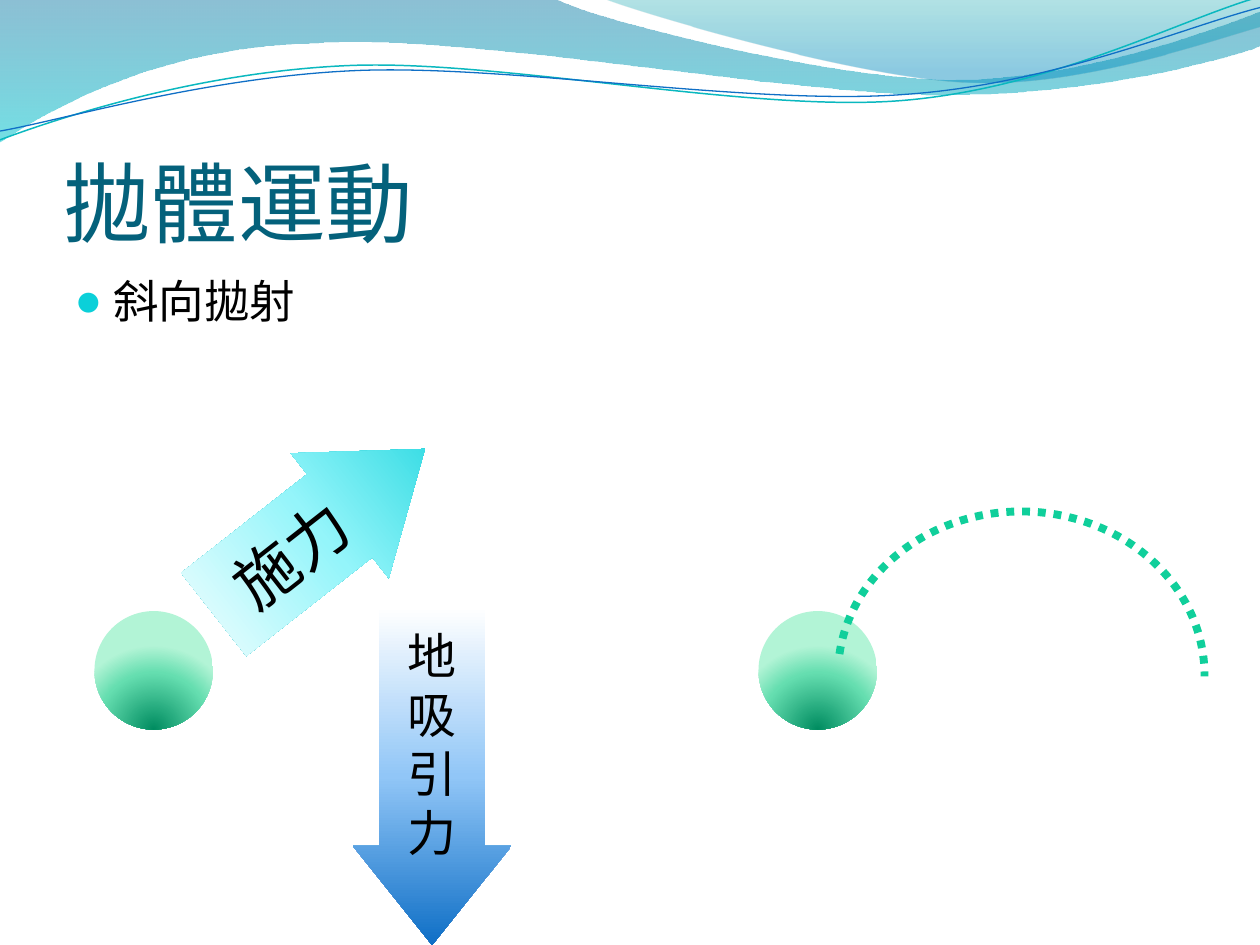
"""Build the projectile motion slide: wave header, forces on a ball and its dotted path."""
from math import cos, radians, sin

from lxml import etree
from pptx import Presentation
from pptx.dml.color import RGBColor
from pptx.enum.dml import MSO_LINE
from pptx.enum.shapes import MSO_SHAPE
from pptx.enum.text import MSO_ANCHOR, PP_ALIGN
from pptx.oxml.ns import qn
from pptx.util import Inches, Pt

TITLE_ONLY = 5
CENTER, LEFT = PP_ALIGN.CENTER, PP_ALIGN.LEFT
MIDDLE, BOTTOM, TOP = MSO_ANCHOR.MIDDLE, MSO_ANCHOR.BOTTOM, MSO_ANCHOR.TOP
OVAL, DOWN, RIGHT, ARC = MSO_SHAPE.OVAL, MSO_SHAPE.DOWN_ARROW, MSO_SHAPE.RIGHT_ARROW, MSO_SHAPE.ARC
DOTTED = MSO_LINE.ROUND_DOT

THEME = {
    "title": {"name": "Calibri", "size": Pt(50), "color": "04617B"},
    "body": {"name": "Noto Sans CJK SC", "size": Pt(26), "color": "000000"},
    "gravity": {"name": "Noto Sans CJK SC", "size": Pt(28), "color": "000000"},
    "push": {"name": "Noto Sans CJK SC", "size": Pt(36), "color": "000000"},
    "bullet": "0BD0D9",
    "trajectory": "10CF9B",
    "wide wave": [(0, "0074A1", 45), (100, "00C6CF", 55)],
    "right wave": [(0, "00A1A9", 30), (80, "008BBF", 45)],
    "teal line": "0AB8BF",
    "blue line": "0F6FC6",
    "ball": [(0, "008C60", 100), (68, "65DEB0", 100), (100, "B2F4D6", 100)],
    "gravity fill": [(0, "FFFFFF", 100), (50, "91C6F7", 100), (100, "0F6FC6", 100)],
    "push fill": [(0, "0BD0D9", 100), (50, "94F5FA", 100), (100, "FFFFFF", 100)],
}


def fill_gradient(shape, stops, angle=None):
    """Fill with a linear gradient, or a circular one when no angle is given."""
    shape.fill.gradient()
    gradient = shape._element.spPr.find(qn("a:gradFill"))
    for child in list(gradient):
        gradient.remove(child)
    stop_list = etree.SubElement(gradient, qn("a:gsLst"))
    for position, color, opacity in stops:
        stop = etree.SubElement(stop_list, qn("a:gs"), pos=str(position * 1000))
        rgb = etree.SubElement(stop, qn("a:srgbClr"), val=color)
        if opacity < 100:
            etree.SubElement(rgb, qn("a:alpha"), val=str(opacity * 1000))
    if angle is None:
        circle = etree.SubElement(gradient, qn("a:path"), path="circle")
        etree.SubElement(circle, qn("a:fillToRect"), l="50000", t="130000", r="50000", b="-30000")
    else:
        etree.SubElement(gradient, qn("a:lin"), ang=str(angle * 60000), scaled="0")


def write(frame, text, style, align, anchor):
    """Put one formatted paragraph in a text frame."""
    frame.word_wrap = True
    frame.vertical_anchor = anchor
    paragraph = frame.paragraphs[0]
    paragraph.alignment = align
    run = paragraph.add_run()
    run.text = text
    for attribute in ("name", "size"):
        setattr(run.font, attribute, style[attribute])
    run.font.color.rgb = RGBColor.from_string(style["color"])
    return paragraph


prs = Presentation()
prs.slide_width, prs.slide_height = Inches(10), Inches(7.5)
slide = prs.slides.add_slide(prs.slide_layouts[TITLE_ONLY])
shapes = slide.shapes

waves = [
    ("wide wave", None, [
        [(0, 0)],
        [(4.4, -0.01)],
        [(4.76, 0.17), (6.64, 0.63), (7.58, 0.63)],
        [(8.53, 0.63), (9.58, 0.26), (10, 0.09)],
        [(10.01, 0.36)],
        [(9.83, 0.44), (8.7, 0.76), (7.46, 0.75)],
        [(6.22, 0.75), (3.82, 0.28), (2.57, 0.34)],
        [(1.29, 0.36), (0.46, 0.83), (-0.01, 1.13)]]),
    ("right wave", None, [
        [(4.79, -0.01)],
        [(5.09, 0.11), (6.82, 0.62), (7.69, 0.65)],
        [(8.56, 0.69), (9.61, 0.32), (10, 0.21)],
        [(10, 0)]]),
    ("teal line", 0.85, [
        [(0, 1.11)],
        [(0.48, 0.93), (1.58, 0.57), (2.77, 0.52)],
        [(3.95, 0.47), (5.93, 0.89), (7.13, 0.8)],
        [(8.33, 0.71), (9.38, 0.15), (9.98, -0.02)]]),
    ("blue line", 0.75, [
        [(0, 1.04)],
        [(0.47, 0.96), (1.64, 0.61), (2.83, 0.56)],
        [(4.03, 0.51), (5.97, 0.84), (7.17, 0.75)],
        [(8.36, 0.67), (9.41, 0.21), (10, 0.06)]]),
]
LINE_TILT = 2.7
PIVOT_X, PIVOT_Y = 4.99, 0.58
for role, line_width, segments in waves:
    tilt = radians(LINE_TILT) if line_width else 0
    points = []
    for x, y in sum(segments, []):
        dx, dy = x - PIVOT_X, y - PIVOT_Y
        points.append((Inches(PIVOT_X + dx * cos(tilt) - dy * sin(tilt)),
                       Inches(PIVOT_Y + dx * sin(tilt) + dy * cos(tilt))))
    builder = shapes.build_freeform(*points[0])
    builder.add_line_segments(points[1:], close=line_width is None)
    wave = builder.convert_to_shape()
    wave.shadow.inherit = False
    corners = iter(list(wave._element.iter(qn("a:lnTo"))))
    for segment in segments[1:]:
        group = [next(corners) for _ in segment]
        if len(group) == 3:
            curve = etree.Element(qn("a:cubicBezTo"))
            group[0].addprevious(curve)
            for corner in group:
                curve.append(corner[0])
                corner.getparent().remove(corner)
    if line_width is None:
        fill_gradient(wave, THEME[role], 90)
        wave.line.fill.background()
    else:
        wave.rotation = 360 - LINE_TILT
        wave.fill.background()
        wave.line.width = Pt(line_width)
        wave.line.color.rgb = RGBColor.from_string(THEME[role])

heading = shapes.title
placement = {"left": 0.5, "top": 0.77, "width": 9, "height": 1.25}
insets = {"margin_left": 0, "margin_top": 0.05, "margin_right": 0, "margin_bottom": 0}
for target, values in ((heading, placement), (heading.text_frame, insets)):
    for attribute, value in values.items():
        setattr(target, attribute, Inches(value))
write(heading.text_frame, "拋體運動", THEME["title"], LEFT, BOTTOM)

topic = shapes.add_textbox(Inches(0.5), Inches(2.12), Inches(9), Inches(4.8))
topic_line = write(topic.text_frame, "斜向拋射", THEME["body"], LEFT, TOP)
topic_line.space_before = Pt(5.2)
bullet = topic_line._p.get_or_add_pPr()
bullet.set("marL", str(Inches(0.3)))
bullet.set("indent", str(-Inches(0.3)))
bullet_color = etree.SubElement(bullet, qn("a:buClr"))
etree.SubElement(bullet_color, qn("a:srgbClr"), val=THEME["bullet"])
etree.SubElement(bullet, qn("a:buSzPct"), val="95000")
etree.SubElement(bullet, qn("a:buFont"), typeface=THEME["title"]["name"])
etree.SubElement(bullet, qn("a:buChar"), char="●")

for ball_left in (0.75, 6.02):
    ball = shapes.add_shape(OVAL, Inches(ball_left), Inches(4.85), Inches(0.94), Inches(0.94))
    ball.shadow.inherit = False
    ball.line.fill.background()
    fill_gradient(ball, THEME["ball"])

forces = [
    ("gravity", "地吸引力", DOWN, (2.8, 4.82, 1.26, 2.68), 0, (0.665, 0.624), 90),
    ("push", "施力", RIGHT, (1.47, 3.59, 2.13, 1.26), 321.9, (0.665, 0.682), 180),
]
for role, label, kind, box, rotation, proportions, angle in forces:
    force = shapes.add_shape(kind, *map(Inches, box))
    force.shadow.inherit = False
    force.rotation = rotation
    force.adjustments[0], force.adjustments[1] = proportions
    force.line.fill.background()
    fill_gradient(force, THEME[f"{role} fill"], angle)
    write(force.text_frame, label, THEME[role], CENTER, MIDDLE)

trajectory = shapes.add_shape(ARC, Inches(6.65), Inches(4.06), Inches(2.91), Inches(2.6))
trajectory.shadow.inherit = False
trajectory.adjustments[0], trajectory.adjustments[1] = 112.0, 0.23
trajectory.fill.background()
trajectory.line.color.rgb = RGBColor.from_string(THEME["trajectory"])
trajectory.line.width = Pt(4.5)
trajectory.line.dash_style = DOTTED

prs.save("out.pptx")
